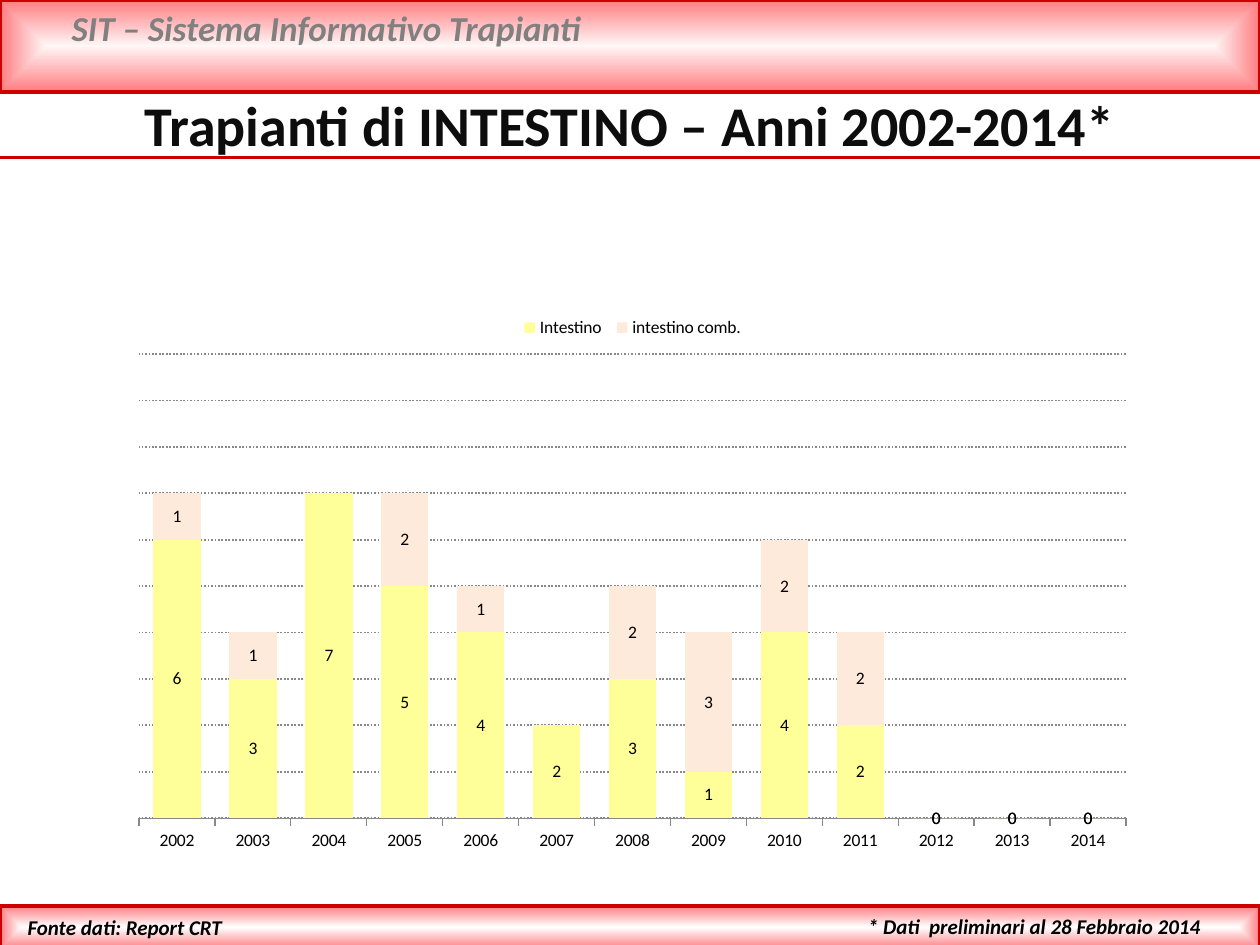
from lxml import etree
from pptx import Presentation
from pptx.chart.data import CategoryChartData
from pptx.dml.color import RGBColor
from pptx.enum.chart import XL_CHART_TYPE as ChartType, XL_LEGEND_POSITION as LegendPosition
from pptx.enum.chart import XL_LABEL_POSITION as LabelPosition, XL_TICK_LABEL_POSITION as TickLabels
from pptx.enum.chart import XL_TICK_MARK as TickMark
from pptx.enum.dml import MSO_LINE as LineDash
from pptx.enum.shapes import MSO_CONNECTOR as Connector, MSO_SHAPE as Shape
from pptx.enum.text import MSO_ANCHOR as Anchor, PP_ALIGN as Align
from pptx.oxml import parse_xml
from pptx.oxml.ns import nsdecls, qn
from pptx.util import Inches, Pt


def color(value):
    return RGBColor.from_string(value)


class ReportSlide:
    font = "Calibri"
    red = "CC0000"
    pink = "FF7C80"
    black = "000000"
    gray = "888888"

    def __init__(self, deck):
        self.slide = deck.slides.add_slide(deck.slide_layouts[5])

    def band(self, top, height, center):
        band = self.slide.shapes.add_shape(
            Shape.RECTANGLE, Inches(0), Inches(top), Inches(10), Inches(height))
        band.shadow.inherit = False
        band.line.color.rgb = color(self.red)
        band.line.width = Pt(2)
        band.fill.gradient()
        gradient = band._element.spPr.find(qn("a:gradFill"))
        gradient.getparent().replace(gradient, parse_xml(
            f'<a:gradFill {nsdecls("a")} rotWithShape="1"><a:gsLst>'
            f'<a:gs pos="0"><a:srgbClr val="{center}"/></a:gs>'
            f'<a:gs pos="100000"><a:srgbClr val="{self.pink}"/></a:gs></a:gsLst>'
            '<a:path path="shape"><a:fillToRect l="50000" t="50000" r="50000" b="50000"/>'
            '</a:path></a:gradFill>'))

    def rule(self, top):
        rule = self.slide.shapes.add_connector(
            Connector.STRAIGHT, Inches(0), Inches(top), Inches(10), Inches(top))
        rule.line.color.rgb = color(self.red)
        rule.line.width = Pt(2)
        etree.SubElement(rule._element.spPr, qn("a:effectLst"))

    def add_text(self, frame, text, size, ink, italic, align=Align.LEFT):
        frame.word_wrap = True
        frame.vertical_anchor = Anchor.TOP
        paragraph = frame.paragraphs[0]
        paragraph.alignment = align
        run = paragraph.add_run()
        run.text = text
        run.font.name = self.font
        run.font.size = Pt(size)
        run.font.bold = True
        run.font.italic = italic
        run.font.color.rgb = color(ink)

    def label(self, left, top, width, height, text, size, ink):
        box = self.slide.shapes.add_textbox(
            Inches(left), Inches(top), Inches(width), Inches(height))
        self.add_text(box.text_frame, text, size, ink, True)

    def title(self, left, top, width, height, text):
        title = self.slide.shapes.title
        title.left, title.top = Inches(left), Inches(top)
        title.width, title.height = Inches(width), Inches(height)
        self.add_text(title.text_frame, text, 32, "0D0D0D", False, Align.CENTER)

    def stacked_chart(self, left, top, width, height, years, transplants):
        data = CategoryChartData()
        data.categories = years
        for name, counts, _ in transplants:
            data.add_series(name, counts)
        chart = self.slide.shapes.add_chart(
            ChartType.COLUMN_STACKED, Inches(left), Inches(top),
            Inches(width), Inches(height), data).chart
        chart.has_title = False
        chart.font.name = self.font
        chart.font.size = Pt(10)
        chart.font.color.rgb = color(self.black)
        chart.has_legend = True
        chart.legend.position = LegendPosition.TOP
        chart.legend.include_in_layout = False
        self.style_axes(chart)
        self.style_series(chart.plots[0], transplants)
        self.place_plot(chart, x=0.02, y=0.09, w=0.96, h=0.83)

    def style_axes(self, chart):
        year_axis = chart.category_axis
        year_axis.major_tick_mark = TickMark.OUTSIDE
        year_axis.tick_label_position = TickLabels.LOW
        year_axis.format.line.color.rgb = color(self.gray)
        count_axis = chart.value_axis
        count_axis.minimum_scale = 0
        count_axis.maximum_scale = 10
        count_axis.major_unit = 1
        count_axis.visible = False
        count_axis.has_major_gridlines = True
        grid = count_axis.major_gridlines.format.line
        grid.color.rgb = color(self.gray)
        grid.width = Pt(1)
        grid.dash_style = LineDash.ROUND_DOT

    def style_series(self, plot, transplants):
        plot.gap_width = 60
        plot.overlap = 100
        plot.vary_by_categories = False
        for series, (_, _, tint) in zip(plot.series, transplants):
            series.format.fill.solid()
            series.format.fill.fore_color.rgb = color(tint)
            series.data_labels.show_value = True
            series.data_labels.position = LabelPosition.CENTER

    def place_plot(self, chart, **bounds):
        plot_area = chart._chartSpace.chart.plotArea
        for old in plot_area.findall(qn("c:layout")):
            plot_area.remove(old)
        sizes = "".join(f'<c:{key} val="{value}"/>' for key, value in bounds.items())
        plot_area.insert(0, parse_xml(
            f'<c:layout {nsdecls("c")}><c:manualLayout><c:layoutTarget val="inner"/>'
            f'<c:xMode val="edge"/><c:yMode val="edge"/>{sizes}'
            '</c:manualLayout></c:layout>'))


def main():
    deck = Presentation()
    deck.slide_width, deck.slide_height = Inches(10), Inches(7.5)
    report = ReportSlide(deck)
    report.band(0, 0.73, "FFF6F6")
    report.label(0.47, 0, 8.98, 0.44, "SIT – Sistema Informativo Trapianti", 20, "808080")
    report.band(7.19, 0.34, "FFFFFF")
    report.rule(1.25)
    report.label(6.79, 7.2, 3.21, 0.3, "* Dati  preliminari al 28 Febbraio 2014", 12, report.black)
    report.label(0.12, 7.21, 3.21, 0.3, "Fonte dati: Report CRT", 12, report.black)
    report.title(0, 0.67, 10, 0.64, "Trapianti di INTESTINO – Anni 2002-2014*")
    years = [str(year) for year in range(2002, 2015)]
    transplants = [
        ("Intestino ", [6, 3, 7, 5, 4, 2, 3, 1, 4, 2, 0, 0, 0], "FFFF99"),
        ("intestino comb.", [1, 1, None, 2, 1, None, 2, 3, 2, 2, 0, 0, 0], "FDEADA"),
    ]
    report.stacked_chart(0.94, 2.41, 8.16, 4.44, years, transplants)
    deck.save("out.pptx")


if __name__ == "__main__":
    main()
